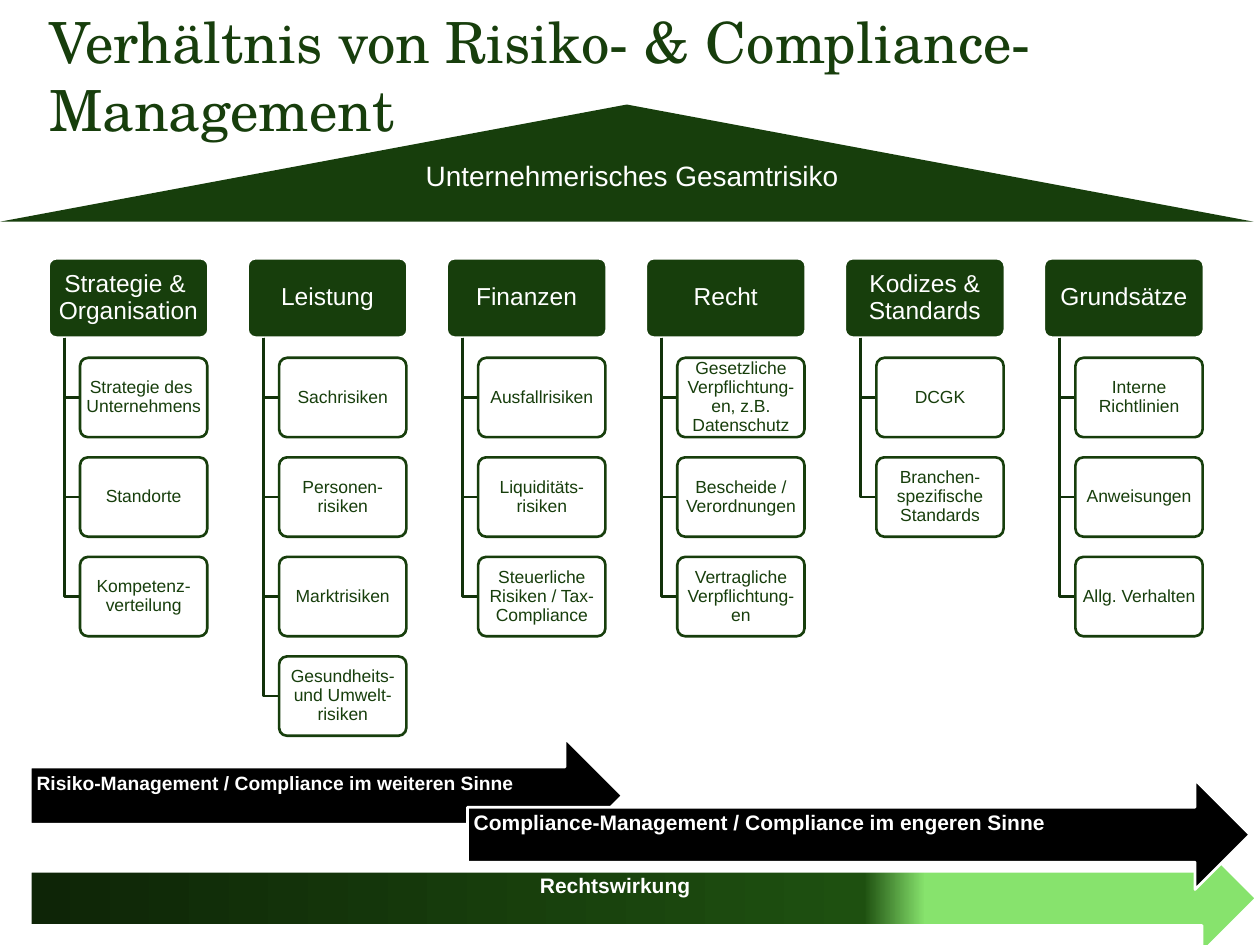
from typing import NamedTuple, Optional

import pptx
import pptx.dml.color
import pptx.enum.shapes
import pptx.enum.text
import pptx.oxml
import pptx.oxml.ns
import pptx.util
from copy import deepcopy

Inches = pptx.util.Inches
Pt = pptx.util.Pt
RGBColor = pptx.dml.color.RGBColor
MSO_SHAPE = pptx.enum.shapes.MSO_SHAPE
MSO_ANCHOR = pptx.enum.text.MSO_ANCHOR
PP_ALIGN = pptx.enum.text.PP_ALIGN
qn = pptx.oxml.ns.qn

DARK_GREEN = RGBColor(0x17, 0x3E, 0x0C)
CONNECTOR_GREEN = RGBColor(0x12, 0x32, 0x0A)
WHITE = RGBColor(0xFF, 0xFF, 0xFF)
BLACK = RGBColor(0x00, 0x00, 0x00)
LAW_GRADIENT = [
    (0.27, RGBColor(0x87, 0xE3, 0x6D)),
    (0.32, RGBColor(0x1E, 0x50, 0x10)),
    (1.0, RGBColor(0x0E, 0x25, 0x07)),
]

COLUMN_LEFT, COLUMN_STEP = 0.385, 1.58
HEADER_TOP, HEADER_WIDTH, BOX_HEIGHT = 2.05, 1.27, 0.63
CARD_TOP, CARD_STEP = 2.84, 0.79
CARD_INDENT, CARD_WIDTH = 0.25, 1.01
HEADER_INSETS = (0.03, 0.02, 0.03, 0.02)
CARD_INSETS = (0.02, 0.01, 0.02, 0.01)
ARROW_INSETS = (0.05, 0.05, 0.28, 0.23)


class RiskColumn(NamedTuple):
    header: str
    cards: list[str]


class Arrow(NamedTuple):
    text: str
    left: float
    top: float
    width: float
    height: float
    size: int
    align: PP_ALIGN
    color: Optional[RGBColor]  # None means the gradient


# A vertical tab is a line break inside a paragraph
COLUMNS = [
    RiskColumn("Strategie & \vOrganisation",
               ["Strategie des \vUnternehmens", "Standorte", "Kompetenz-verteilung"]),
    RiskColumn("Leistung",
               ["Sachrisiken", "Personen-risiken", "Marktrisiken",
                "Gesundheits- und Umwelt-risiken"]),
    RiskColumn("Finanzen",
               ["Ausfallrisiken", "Liquiditäts-risiken",
                "Steuerliche Risiken / Tax- Compliance"]),
    RiskColumn("Recht",
               ["Gesetzliche Verpflichtung-en, z.B. Datenschutz",
                "Bescheide /\vVerordnungen", "Vertragliche Verpflichtung-en"]),
    RiskColumn("Kodizes &\vStandards",
               ["DCGK", "Branchen-spezifische Standards"]),
    RiskColumn("Grundsätze",
               ["Interne Richtlinien", "Anweisungen", "Allg. Verhalten"]),
]

ARROWS = [
    Arrow("Rechtswirkung", 0.24, 6.7, 9.73, 0.86, 12, PP_ALIGN.CENTER, None),
    Arrow("Risiko-Management / Compliance im weiteren Sinne",
          0.24, 5.86, 4.7, 0.91, 11, PP_ALIGN.LEFT, BLACK),
    Arrow("Compliance-Management / Compliance im engeren Sinne",
          3.71, 6.19, 6.21, 0.87, 12, PP_ALIGN.LEFT, BLACK),
]


def write_text(shape, text: str, size: float, color: RGBColor, insets: tuple,
               align=PP_ALIGN.CENTER, anchor=MSO_ANCHOR.MIDDLE, bold=False,
               font="Arial", spacing=0.9) -> None:
    frame = shape.text_frame
    frame.text = text
    frame.word_wrap = True
    frame.auto_size = pptx.enum.text.MSO_AUTO_SIZE.NONE
    frame.vertical_anchor = anchor
    (frame.margin_left, frame.margin_top,
     frame.margin_right, frame.margin_bottom) = map(Inches, insets)
    paragraph = frame.paragraphs[0]
    paragraph.alignment = align
    paragraph.line_spacing = spacing
    for run in paragraph.runs:
        run.font.name = font
        run.font.size = Pt(size)
        run.font.bold = bold
        run.font.color.rgb = color


def add_filled(slide, kind, left: float, top: float, width: float, height: float,
               fill: RGBColor, line: Optional[RGBColor] = None):
    shape = slide.shapes.add_shape(
        kind, Inches(left), Inches(top), Inches(width), Inches(height))
    shape.shadow.inherit = False
    shape.fill.solid()
    shape.fill.fore_color.rgb = fill
    if line is None:
        shape.line.fill.background()
    else:
        shape.line.color.rgb = line
        shape.line.width = Pt(1.5)
    return shape


def add_box(slide, left: float, top: float, width: float,
            fill: RGBColor, line: RGBColor):
    box = add_filled(slide, MSO_SHAPE.ROUNDED_RECTANGLE,
                     left, top, width, BOX_HEIGHT, fill, line)
    box.adjustments[0] = 0.1
    return box


def add_elbow(slide, left: float, top: float, right: float, bottom: float) -> None:
    builder = slide.shapes.build_freeform(Inches(left), Inches(top))
    builder.add_line_segments(
        [(Inches(left), Inches(bottom)), (Inches(right), Inches(bottom))], close=False)
    elbow = builder.convert_to_shape()
    elbow.shadow.inherit = False
    elbow.fill.background()
    elbow.line.color.rgb = CONNECTOR_GREEN
    elbow.line.width = Pt(1.5)


def add_column(slide, left: float, column: RiskColumn) -> None:
    header = add_box(slide, left, HEADER_TOP, HEADER_WIDTH, DARK_GREEN, WHITE)
    write_text(header, column.header, 14, WHITE, HEADER_INSETS)
    card_left = left + CARD_INDENT
    for row, text in enumerate(column.cards):
        top = CARD_TOP + row * CARD_STEP
        add_elbow(slide, left + CARD_INDENT / 2, HEADER_TOP + BOX_HEIGHT,
                  card_left, top + BOX_HEIGHT / 2)
        card = add_box(slide, card_left, top, CARD_WIDTH, WHITE, DARK_GREEN)
        write_text(card, text, 10, DARK_GREEN, CARD_INSETS)


def apply_gradient(shape) -> None:
    shape.fill.gradient()
    shape.fill.gradient_angle = 180
    stop_list = shape._element.spPr.find(qn("a:gradFill")).find(qn("a:gsLst"))
    stop_list.append(deepcopy(stop_list[-1]))
    for stop, (position, color) in zip(shape.fill.gradient_stops, LAW_GRADIENT):
        stop.position = position
        stop.color.rgb = color


def add_arrow(slide, arrow: Arrow) -> None:
    shape = add_filled(slide, MSO_SHAPE.RIGHT_ARROW, arrow.left, arrow.top,
                       arrow.width, arrow.height, arrow.color or BLACK, WHITE)
    if arrow.color is None:
        apply_gradient(shape)
    write_text(shape, arrow.text, arrow.size, WHITE, ARROW_INSETS,
               align=arrow.align, bold=True)


def main() -> None:
    presentation = pptx.Presentation()
    presentation.slide_width = Inches(10)
    presentation.slide_height = Inches(7.5)
    slide = presentation.slides.add_slide(presentation.slide_layouts[5])

    # Title
    title = slide.shapes.title
    title.left, title.top = Inches(0.29), Inches(0)
    title.width, title.height = Inches(9.28), Inches(0.83)
    write_text(title, "Verhältnis von Risiko- & Compliance-Management", 32.4,
               DARK_GREEN, (0.1, 0.05, 0.1, 0.05), PP_ALIGN.LEFT, MSO_ANCHOR.TOP,
               font="TeX Gyre Schola", spacing=1.0)

    # Risk columns
    for index, column in enumerate(COLUMNS):
        add_column(slide, COLUMN_LEFT + index * COLUMN_STEP, column)

    # Roof
    add_filled(slide, MSO_SHAPE.ISOSCELES_TRIANGLE, 0, 0.83, 9.95, 0.93, DARK_GREEN)
    roof_label = slide.shapes.add_textbox(
        Inches(3.28), Inches(1.21), Inches(4.68), Inches(0.54))
    write_text(roof_label, "Unternehmerisches Gesamtrisiko", 16, WHITE,
               (0.1, 0.05, 0.1, 0.05), PP_ALIGN.LEFT, MSO_ANCHOR.TOP, spacing=1.0)

    # Arrows
    for arrow in ARROWS:
        add_arrow(slide, arrow)

    presentation.save("out.pptx")


if __name__ == "__main__":
    main()
